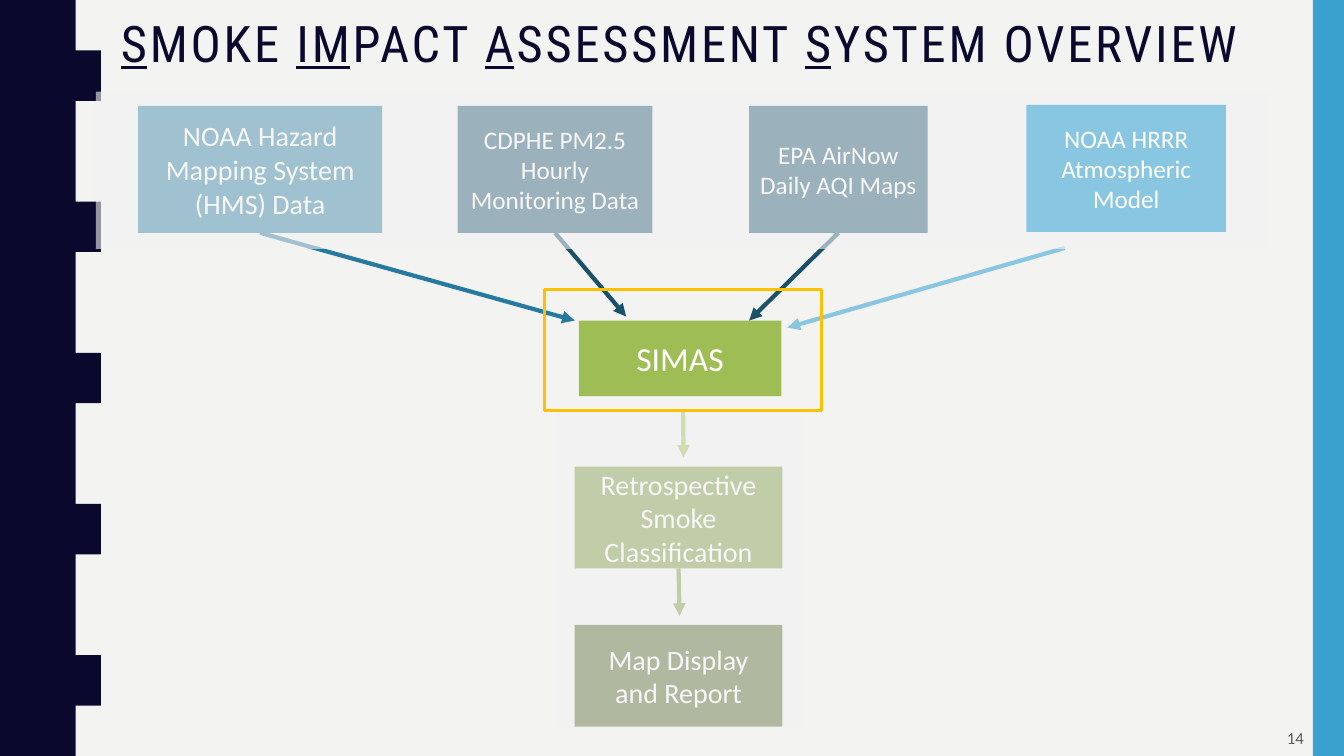
"""Builds the Smoke Impact Assessment System overview slide on a quarter-inch grid."""
from dataclasses import dataclass

from lxml import etree
from pptx import Presentation
from pptx import util as u
from pptx.dml.color import RGBColor
from pptx.enum import shapes, text
from pptx.oxml.ns import qn


@dataclass(frozen=True)
class Theme:
    paper: str = "F3F3F2"
    ink: str = "0B082E"
    band: str = "3AA0CE"
    white: str = "FFFFFF"
    grey: str = "595959"
    veil: str = "F2F2F2"
    gold: str = "FFC000"
    blue: str = "277A9F"
    navy: str = "1A516A"
    sky: str = "89C6E2"
    lime: str = "9EBE55"
    olive: str = "799539"
    moss: str = "516326"
    title_font: str = "Roboto Condensed"
    body_font: str = "Calibri"
    title_size: int = 36
    hub_size: int = 24
    large_size: int = 20
    small_size: int = 18
    number_size: int = 12
    arrow_width: float = 3
    frame_width: float = 2.25
    veil_opacity: int = 60


THEME = Theme()
CELL = u.Inches(0.25)
COLUMNS, ROWS = 53.32, 30

TITLE = [("S", True), ("MOKE ", False), ("IM", True), ("PACT ", False), ("A", True),
         ("SSESSMENT ", False), ("S", True), ("YSTEM OVERVIEW", False)]
TITLE_AREA = (4.4, 0.56, 48.32, 3.08)
NUMBER = [("14", False)]
NUMBER_AREA = (48.36, 28.52, 3.76, 1.52)
BAND_AREA = (52.08, 0, COLUMNS - 52.08, ROWS)

SOURCE_TOP, SOURCE_HEIGHT = 4.2, 5.04
STAGE_LEFT, STAGE_WIDTH, STAGE_HEIGHT = 22.8, 8.24, 4.04
BOXES = {
    "hub": ("SIMAS", (22.96, 12.72, 8.04, 3), THEME.lime, THEME.hub_size),
    "classification": ("Retrospective Smoke Classification",
                       (STAGE_LEFT, 18.52, STAGE_WIDTH, STAGE_HEIGHT), THEME.olive, THEME.large_size),
    "report": ("Map Display and Report",
               (STAGE_LEFT, 24.8, STAGE_WIDTH, STAGE_HEIGHT), THEME.moss, THEME.large_size),
    "hazard": ("NOAA Hazard Mapping System (HMS) Data",
               (5.48, SOURCE_TOP, 9.68, SOURCE_HEIGHT), THEME.blue, THEME.large_size),
    "monitoring": ("CDPHE PM2.5 Hourly Monitoring Data",
                   (18.16, SOURCE_TOP, 7.72, SOURCE_HEIGHT), THEME.navy, THEME.small_size),
    "air": ("EPA AirNow Daily AQI Maps",
            (29.72, SOURCE_TOP, 7.08, SOURCE_HEIGHT), THEME.navy, THEME.small_size),
}
MODEL_BOX = ("NOAA HRRR Atmospheric Model", (40.72, 4.16, 7.92, SOURCE_HEIGHT),
             THEME.sky, THEME.small_size)
ARROWS = [
    ("monitoring", (21.92, 9.2), (24.84, 12.56), THEME.navy),
    (None, (42.24, 9.84), (31.24, 13), THEME.sky),
    ("hazard", (10.24, 9.2), (22.8, 12.72), THEME.blue),
    ("frame", (27.12, 16.32), (27.12, 18.16), THEME.lime),
    ("classification", (26.96, 22.6), (26.96, 24.44), THEME.olive),
    ("air", (33.16, 9.2), (29.72, 12.72), THEME.navy),
]
VEILS = [(22.08, 16.28, 9.68, 12.64), (3.8, 3.64, 46.6, 6.24)]
FRAME_AREA = (21.6, 11.48, 11, 4.8)

WAVE_PERIOD = 6
HALF_WAVE = [(3.12, 0), (3.12, 0.28), (3.16, 0.56), (3.2, 0.8), (3.24, 1), (3.32, 1.16),
             (3.4, 1.32), (3.48, 1.52), (3.56, 1.68), (3.64, 1.84), (3.72, 2), (3.8, 2.2),
             (3.84, 2.44), (3.88, 2.72), (3.88, 3)]


def cells(values):
    return [round(value * CELL) for value in values]


def color(value):
    return RGBColor.from_string(value)


def paint(shape, fill=None, line=None):
    shape.shadow.inherit = False
    if fill:
        shape.fill.solid()
        shape.fill.fore_color.rgb = color(fill)
    else:
        shape.fill.background()
    if line:
        shape.line.color.rgb = color(line)
        shape.line.width = u.Pt(THEME.frame_width)
    else:
        shape.line.fill.background()
    return shape


def add_rectangle(slide, area, fill=None, line=None):
    shape = slide.shapes.add_shape(shapes.MSO_SHAPE.RECTANGLE, *cells(area))
    return paint(shape, fill, line)


def write(shape, runs, font_name, size, ink, alignment, anchor):
    frame = shape.text_frame
    frame.word_wrap = True
    frame.vertical_anchor = anchor
    paragraph = frame.paragraphs[0]
    paragraph.alignment = alignment
    for words, underlined in runs:
        run = paragraph.add_run()
        run.text = words
        run.font.name = font_name
        run.font.size = u.Pt(size)
        run.font.color.rgb = color(ink)
        run.font.underline = underlined
    return paragraph


def add_box(slide, words, area, fill, size):
    shape = add_rectangle(slide, area, fill)
    write(shape, [(words, False)], THEME.body_font, size, THEME.white,
          text.PP_ALIGN.CENTER, text.MSO_ANCHOR.MIDDLE)
    return shape


def add_arrow(slide, start, end, ink):
    arrow = slide.shapes.add_connector(shapes.MSO_CONNECTOR.STRAIGHT, *cells(start + end))
    arrow.line.color.rgb = color(ink)
    arrow.line.width = u.Pt(THEME.arrow_width)
    etree.SubElement(arrow.line._get_or_add_ln(), qn("a:tailEnd"), type="triangle")
    etree.SubElement(arrow._element.spPr, qn("a:effectLst"))
    return arrow


def add_veil(slide, area):
    veil = add_rectangle(slide, area, THEME.veil)
    tint = veil._element.spPr.find(qn("a:solidFill"))[0]
    etree.SubElement(tint, qn("a:alpha"), val=str(THEME.veil_opacity * 1000))


def add_wave(slide):
    falling = [(x, WAVE_PERIOD - y) for x, y in reversed(HALF_WAVE[:-1])]
    edge = [(x, y + top) for top in range(0, ROWS, WAVE_PERIOD) for x, y in HALF_WAVE + falling]
    builder = slide.shapes.build_freeform(0, 0, scale=float(CELL))
    builder.add_line_segments(edge + [(0, ROWS)], close=True)
    paint(builder.convert_to_shape(), THEME.ink)


def add_title(slide):
    title = slide.shapes.add_textbox(*cells(TITLE_AREA))
    paragraph = write(title, TITLE, THEME.title_font, THEME.title_size, THEME.ink,
                      text.PP_ALIGN.LEFT, text.MSO_ANCHOR.TOP)
    paragraph.line_spacing = 0.9
    for run in paragraph.runs:
        run.font._element.set("spc", "200")


def main():
    presentation = Presentation()
    presentation.slide_width, presentation.slide_height = cells((COLUMNS, ROWS))
    slide = presentation.slides.add_slide(presentation.slide_layouts[6])
    slide.background.fill.solid()
    slide.background.fill.fore_color.rgb = color(THEME.paper)

    add_wave(slide)
    add_rectangle(slide, BAND_AREA, THEME.band)
    add_title(slide)
    number = slide.shapes.add_textbox(*cells(NUMBER_AREA))
    write(number, NUMBER, THEME.body_font, THEME.number_size, THEME.grey,
          text.PP_ALIGN.RIGHT, text.MSO_ANCHOR.MIDDLE)

    boxes = {name: add_box(slide, *box) for name, box in BOXES.items()}
    arrows = [(origin, add_arrow(slide, *route)) for origin, *route in ARROWS]
    for area in VEILS:
        add_veil(slide, area)
    boxes["frame"] = add_rectangle(slide, FRAME_AREA, line=THEME.gold)
    add_box(slide, *MODEL_BOX)
    for origin, arrow in arrows:
        if origin:
            arrow.begin_connect(boxes[origin], 2)

    presentation.save("out.pptx")


if __name__ == "__main__":
    main()
